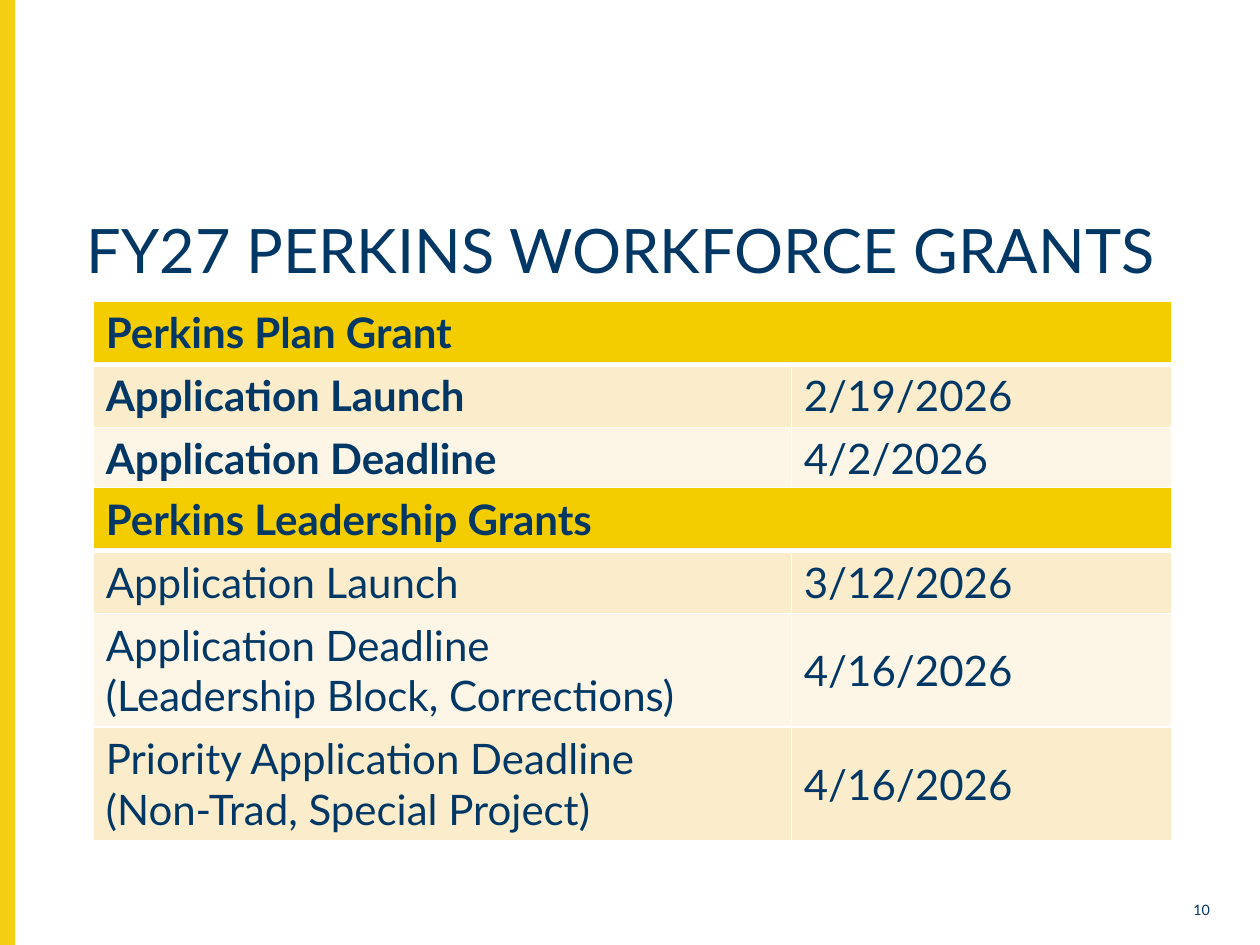
"""Build the FY27 Perkins Workforce Grants dates slide."""
from lxml.etree import SubElement
from pptx import Presentation
from pptx.dml.color import RGBColor as Rgb
from pptx.enum.shapes import MSO_SHAPE as Shape
from pptx.enum.text import MSO_ANCHOR as Anchor, PP_ALIGN as Align
from pptx.oxml.ns import qn
from pptx.util import Inches, Pt

TITLE = "FY27 PERKINS WORKFORCE GRANTS"
PAGE_NUMBER = "10"
TABLES = [
    {"heading": "Perkins Plan Grant", "top": 2.39, "bold": True, "anchor": Anchor.TOP,
     "dates": [("Application Launch", "2/19/2026"),
               ("Application Deadline", "4/2/2026")]},
    {"heading": "Perkins Leadership Grants", "top": 3.87, "bold": False, "anchor": Anchor.MIDDLE,
     "dates": [("Application Launch", "3/12/2026"),
               ("Application Deadline\n(Leadership Block, Corrections)", "4/16/2026"),
               ("Priority Application Deadline\n(Non-Trad, Special Project)", "4/16/2026")]},
]
COLORS = {"navy": "003764", "stripe": "F4CE12", "heading": "F4CD00",
          "odd": "FBEDCC", "even": "FDF6E7", "border": "FFFFFF"}
WIDTH, HEIGHT = 10, 7.5
TABLE_LEFT, COLUMNS = 0.74, (5.54, 3.02)
LINE_HEIGHT, CELL_PADDING = 0.4, 0.1


def color(name):
    return Rgb.from_string(COLORS[name])


def write(frame, text, size=24, bold=False, align=None, spacing=None):
    for index, line in enumerate(text.split("\n")):
        para = frame.add_paragraph() if index else frame.paragraphs[0]
        para.alignment, para.line_spacing = align, spacing
        span = para.add_run()
        span.text = line
        span.font.name, span.font.size, span.font.bold = "Lato", Pt(size), bold
        span.font.color.rgb = color("navy")


def add_text(page, text, area, anchor=Anchor.TOP, **style):
    box = page.shapes.add_textbox(*map(Inches, area))
    box.text_frame.word_wrap = True
    box.text_frame.vertical_anchor = anchor
    write(box.text_frame, text, **style)


def paint(cell, fill, top=1, bottom=1):
    cell.fill.solid()
    cell.fill.fore_color.rgb = color(fill)
    props = cell._tc.get_or_add_tcPr()
    for index, (side, width) in enumerate(zip("LRTB", (1, 1, top, bottom))):
        line = SubElement(props, qn(f"a:ln{side}"), w=str(Pt(width)))
        solid = SubElement(line, qn("a:solidFill"))
        SubElement(solid, qn("a:srgbClr"), val=COLORS["border"])
        props.insert(index, line)


def add_dates(page, heading, top, bold, anchor, dates):
    rows = [(heading, "")] + dates
    heights = [(label.count("\n") + 1) * LINE_HEIGHT + CELL_PADDING for label, _ in rows]
    area = (TABLE_LEFT, top, sum(COLUMNS), sum(heights))
    table = page.shapes.add_table(len(rows), len(COLUMNS), *map(Inches, area)).table
    for column, width in zip(table.columns, COLUMNS):
        column.width = Inches(width)
    for index, (label, date) in enumerate(rows):
        table.rows[index].height = Inches(heights[index])
        fill = ("odd" if index % 2 else "even") if index else "heading"
        for cell in table.rows[index].cells:
            paint(cell, fill, top=3 if index == 1 else 1, bottom=1 if index else 3)
        write(table.cell(index, 0).text_frame, label, bold=bold or index == 0)
        if index:
            write(table.cell(index, 1).text_frame, date)
            table.cell(index, 1).vertical_anchor = anchor
    table.cell(0, 0).merge(table.cell(0, 1))


def main():
    deck = Presentation()
    deck.slide_width, deck.slide_height = Inches(WIDTH), Inches(HEIGHT)
    page = deck.slides.add_slide(deck.slide_layouts[6])
    stripe = page.shapes.add_shape(Shape.RECTANGLE, 0, 0, Inches(0.11), Inches(HEIGHT))
    stripe.shadow.inherit = False
    stripe.fill.solid()
    stripe.fill.fore_color.rgb = stripe.line.color.rgb = color("stripe")
    stripe.line.width = Pt(1)
    add_text(page, TITLE, (0.59, 1.7, 9.12, 0.87), size=35, spacing=0.9)
    add_text(page, PAGE_NUMBER, (9.19, 7.09, 0.51, 0.26), anchor=Anchor.MIDDLE,
             size=8.2, align=Align.RIGHT)
    for content in TABLES:
        add_dates(page, **content)
    deck.save("out.pptx")


if __name__ == "__main__":
    main()
